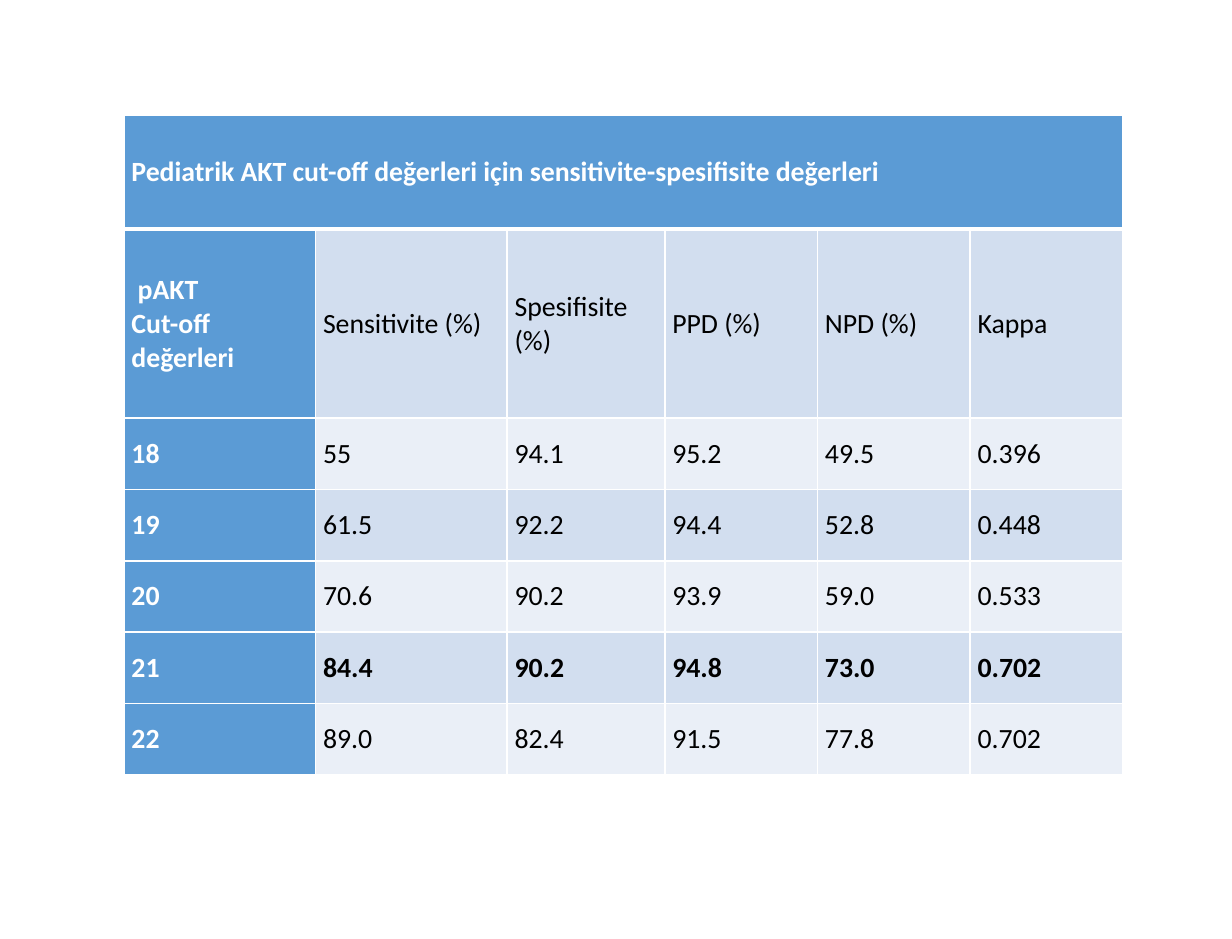
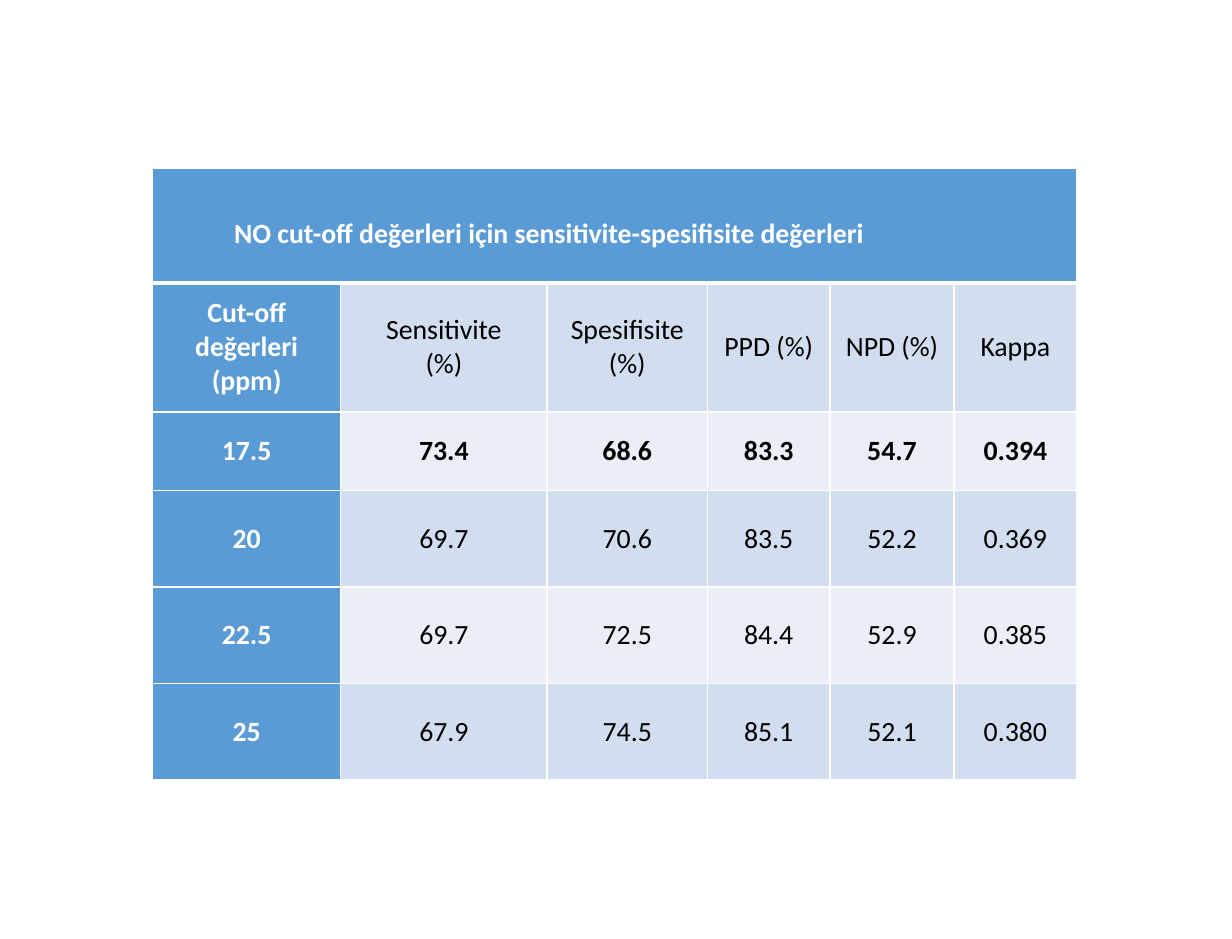
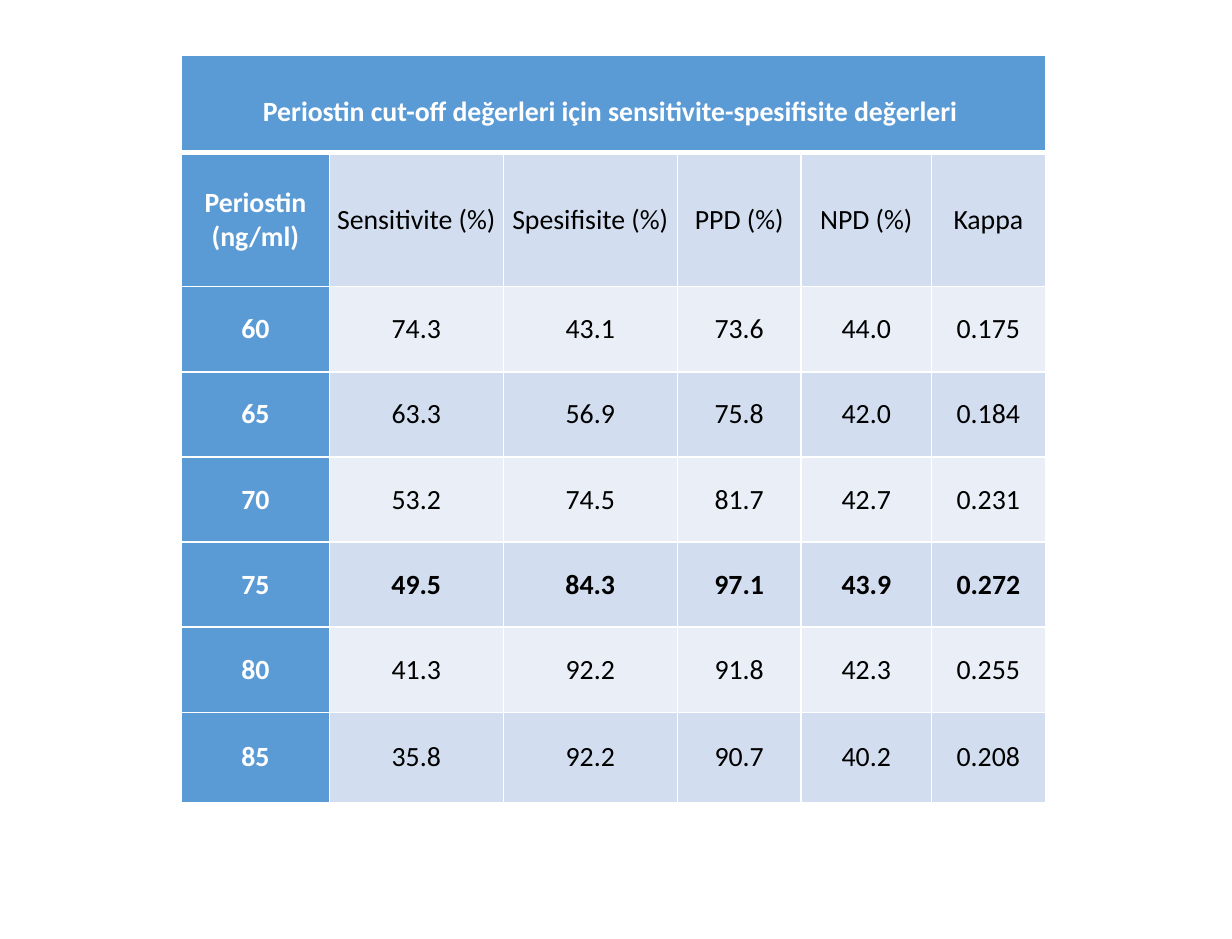
import pptx
import pptx.util
import pptx.dml.color
import pptx.enum.text
import lxml.etree
from pptx.oxml.ns import qn

Inches, Pt = pptx.util.Inches, pptx.util.Pt
ALIGN = pptx.enum.text.PP_ALIGN

COLORS = {
    "accent": "5B9BD5",
    "band_dark": "D2DEEF",
    "band_light": "EAEFF7",
    "border": "FFFFFF",
    "heading_text": "FFFFFF",
    "text": "000000",
}
FONT = {"name": "Calibri", "size": Pt(16)}
CELL_FORMAT = {
    "margin_left": Inches(0.06),
    "margin_right": Inches(0.06),
    "margin_top": 0,
    "margin_bottom": 0,
    "vertical_anchor": pptx.enum.text.MSO_ANCHOR.MIDDLE,
}
THIN, THICK = 1, 3  # border widths in points

# Content: one entry per slide; "best" is the cut-off shown in bold
CUTOFF_TABLES = [
    {
        "title": "Pediatrik AKT cut-off değerleri için sensitivite-spesifisite değerleri",
        "position": (0.99, 0.92),
        "columns": [1.53, 1.53, 1.26, 1.22, 1.22, 1.22],
        "heights": [0.91, 1.51] + [0.57] * 5,
        "align": ALIGN.LEFT,
        "title_format": {"alignment": ALIGN.LEFT},
        "title_indent": 0,
        "best": "21",
        "rows": [
            [" pAKT\nCut-off değerleri", "Sensitivite (%)", "Spesifisite (%)", "PPD (%)", "NPD (%)", "Kappa"],
            ["18", "55", "94.1", "95.2", "49.5", "0.396"],
            ["19", "61.5", "92.2", "94.4", "52.8", "0.448"],
            ["20", "70.6", "90.2", "93.9", "59.0", "0.533"],
            ["21", "84.4", "90.2", "94.8", "73.0", "0.702"],
            ["22", "89.0", "82.4", "91.5", "77.8", "0.702"],
        ],
    },
    {
        "title": "NO cut-off değerleri için sensitivite-spesifisite değerleri",
        "position": (1.22, 1.34),
        "columns": [1.5, 1.65, 1.28, 0.98, 0.99, 0.98],
        "heights": [0.92, 1.03, 0.63] + [0.77] * 3,
        "align": ALIGN.CENTER,
        "title_format": {"alignment": ALIGN.JUSTIFY, "line_spacing": 1.5},
        "title_indent": 0.59,
        "best": "17.5",
        "rows": [
            ["Cut-off değerleri (ppm)", "Sensitivite\n(%)", "Spesifisite (%)", "PPD (%)", "NPD (%)", "Kappa"],
            ["17.5", "73.4", "68.6", "83.3", "54.7", "0.394"],
            ["20", "69.7", "70.6", "83.5", "52.2", "0.369"],
            ["22.5", "69.7", "72.5", "84.4", "52.9", "0.385"],
            ["25", "67.9", "74.5", "85.1", "52.1", "0.380"],
        ],
    },
    {
        "title": "Periostin cut-off değerleri için sensitivite-spesifisite değerleri",
        "position": (1.45, 0.44),
        "columns": [1.18, 1.39, 1.39, 0.99, 1.04, 0.91],
        "heights": [0.78, 1.07] + [0.68] * 5 + [0.72],
        "align": ALIGN.CENTER,
        "title_format": {"alignment": ALIGN.JUSTIFY, "line_spacing": 1.5},
        "title_indent": 0.59,
        "best": "75",
        "rows": [
            ["Periostin (ng/ml)", "Sensitivite (%)", "Spesifisite (%)", "PPD (%)", "NPD (%)", "Kappa"],
            ["60", "74.3", "43.1", "73.6", "44.0", "0.175"],
            ["65", "63.3", "56.9", "75.8", "42.0", "0.184"],
            ["70", "53.2", "74.5", "81.7", "42.7", "0.231"],
            ["75", "49.5", "84.3", "97.1", "43.9", "0.272"],
            ["80", "41.3", "92.2", "91.8", "42.3", "0.255"],
            ["85", "35.8", "92.2", "90.7", "40.2", "0.208"],
        ],
    },
]


def rgb(color):
    return pptx.dml.color.RGBColor.from_string(COLORS[color])


def apply(target, values):
    for attribute, value in values.items():
        setattr(target, attribute, value)


def set_borders(cell, top=THIN, bottom=THIN):
    """Draw the four cell borders; call before the fill is set."""
    properties = cell._tc.get_or_add_tcPr()
    for side, width in (("L", THIN), ("R", THIN), ("T", top), ("B", bottom)):
        line = lxml.etree.SubElement(properties, qn(f"a:ln{side}"), w=str(Pt(width)))
        solid = lxml.etree.SubElement(line, qn("a:solidFill"))
        lxml.etree.SubElement(solid, qn("a:srgbClr"), val=COLORS["border"])


def fill_cell(cell, text, fill, color, bold, paragraph_format):
    apply(cell, CELL_FORMAT)
    cell.fill.solid()
    cell.fill.fore_color.rgb = rgb(fill)
    cell.text_frame.text = text
    for paragraph in cell.text_frame.paragraphs:
        apply(paragraph, paragraph_format)
        for run in paragraph.runs:
            apply(run.font, {**FONT, "bold": bold})
            run.font.color.rgb = rgb(color)


def add_title_row(table, content):
    for cell in table.rows[0].cells:
        set_borders(cell, bottom=THICK)
    title = table.cell(0, 0)
    title.merge(table.cell(0, len(content["columns"]) - 1))
    fill_cell(title, content["title"], "accent", "heading_text", True, content["title_format"])
    # First-line indent
    properties = title.text_frame.paragraphs[0]._p.get_or_add_pPr()
    properties.set("indent", str(Inches(content["title_indent"])))


def add_value_row(table, row, values, content):
    band = "band_dark" if row % 2 else "band_light"
    for column, text in enumerate(values):
        cell = table.cell(row, column)
        set_borders(cell, top=THICK if row == 1 else THIN)
        is_label = column == 0
        fill_cell(
            cell, text,
            fill="accent" if is_label else band,
            color="heading_text" if is_label else "text",
            bold=is_label or values[0] == content["best"],
            paragraph_format={"alignment": content["align"]},
        )


def add_cutoff_table(slide, content):
    columns, heights = content["columns"], content["heights"]
    left, top = content["position"]
    table = slide.shapes.add_table(
        len(heights), len(columns), Inches(left), Inches(top),
        Inches(sum(columns)), Inches(sum(heights)),
    ).table
    table.first_col = True
    for column, width in zip(table.columns, columns):
        column.width = Inches(width)
    for row, height in zip(table.rows, heights):
        row.height = Inches(height)
    add_title_row(table, content)
    for row, values in enumerate(content["rows"], start=1):
        add_value_row(table, row, values, content)


def main():
    deck = pptx.Presentation()
    deck.slide_width, deck.slide_height = Inches(9.84), Inches(7.5)
    blank = deck.slide_layouts[6]
    for content in CUTOFF_TABLES:
        add_cutoff_table(deck.slides.add_slide(blank), content)
    deck.save("out.pptx")


if __name__ == "__main__":
    main()
